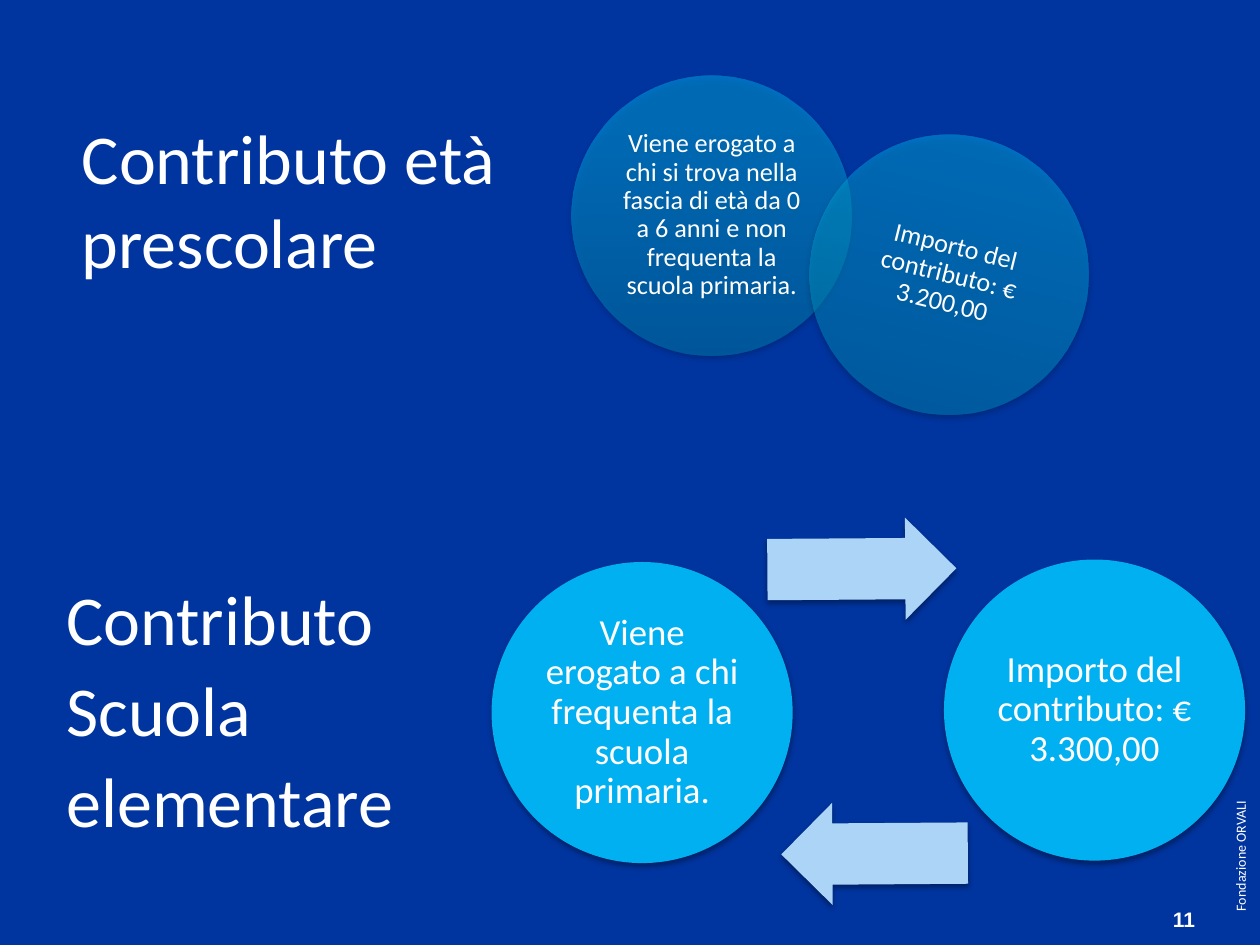
from lxml import etree
from pptx import Presentation
from pptx.dml.color import RGBColor
from pptx.enum.shapes import MSO_SHAPE
from pptx.enum.text import MSO_ANCHOR, PP_ALIGN
from pptx.oxml import parse_xml
from pptx.oxml.ns import nsdecls, qn
from pptx.util import Cm, Pt

COLORS = {
    "background": "00349E",
    "text": "FFFFFF",
    "circle": "00B0F0",
    "arrow": "ABD4F6",
    "shadow": "000000",
}
# Position in percent and colour of each gradient stop
VENN_STOPS = [(0, "0083B3"), (80, "00ABE9"), (100, "00ABEA")]


def rgb(name):
    return RGBColor.from_string(COLORS[name])


def write_text(sp, lines, size, font="Calibri", bold=False, align=PP_ALIGN.LEFT,
               anchor=MSO_ANCHOR.TOP, spacing=None, gap=0, inset=None):
    tf = sp.text_frame
    tf.word_wrap = True
    tf.vertical_anchor = anchor
    if inset is not None:
        tf.margin_left = tf.margin_right = Cm(inset)
        tf.margin_top = tf.margin_bottom = Cm(inset)
    for i, line in enumerate(lines):
        p = tf.paragraphs[0] if i == 0 else tf.add_paragraph()
        p.alignment = align
        if spacing:
            p.line_spacing = spacing
        if i:
            p.space_before = Pt(gap)
        r = p.add_run()
        r.text = line
        r.font.name, r.font.size, r.font.bold = font, Pt(size), bold
        r.font.color.rgb = rgb("text")


def add_label(s, x, y, w, h, lines, size, rotation=0, **fmt):
    sp = s.shapes.add_textbox(Cm(x), Cm(y), Cm(w), Cm(h))
    sp.rotation = rotation
    write_text(sp, lines, size, **fmt)


def add_soft_shadow(sp):
    sp.shadow.inherit = False
    effects = sp._element.spPr.find(qn("a:effectLst"))
    effects.append(parse_xml(
        f'<a:outerShdw {nsdecls("a")} blurRad="{Pt(3.1)}" dist="{Pt(1.8)}" '
        f'dir="5400000" rotWithShape="0"><a:srgbClr val="{COLORS["shadow"]}">'
        '<a:alpha val="35000"/></a:srgbClr></a:outerShdw>'))


def set_glass_fill(sp):
    """Half-transparent gradient that runs from bottom to top."""
    sp.fill.gradient()
    grad = sp._element.spPr.find(qn("a:gradFill"))
    for child in list(grad):
        grad.remove(child)
    stops = etree.SubElement(grad, qn("a:gsLst"))
    for pos, color in VENN_STOPS:
        gs = etree.SubElement(stops, qn("a:gs"), pos=str(pos * 1000))
        clr = etree.SubElement(gs, qn("a:srgbClr"), val=color)
        etree.SubElement(clr, qn("a:alpha"), val="50000")
    etree.SubElement(grad, qn("a:lin"), ang="16200000", scaled="0")


def add_figure(s, kind, x, y, w, h, fill=None, rotation=0):
    sp = s.shapes.add_shape(kind, Cm(x), Cm(y), Cm(w), Cm(h))
    sp.rotation = rotation
    sp.line.fill.background()
    if fill:
        sp.fill.solid()
        sp.fill.fore_color.rgb = rgb(fill)
    else:
        set_glass_fill(sp)
    add_soft_shadow(sp)
    return sp


def add_circle(s, x, y, d, text, size, inset, **look):
    sp = add_figure(s, MSO_SHAPE.OVAL, x, y, d, d, **look)
    write_text(sp, [text], size, align=PP_ALIGN.CENTER,
               anchor=MSO_ANCHOR.MIDDLE, spacing=0.9, inset=inset)


def add_venn(s, x, y, d):
    """Two overlapping glass circles, the second one tilted."""
    circles = [
        (0, 0, 0, "Viene erogato a chi si trova nella fascia di età da 0 a 6 anni "
                  "e non frequenta la scuola primaria."),
        (4.78, 1.2, 13.9, "Importo del contributo: € 3.200,00"),
    ]
    for dx, dy, angle, text in circles:
        add_circle(s, x + dx, y + dy, d, text, 15, 0.15, rotation=angle)


def add_cycle(s, x, y, d):
    """Two solid circles joined by arrows in both directions."""
    circles = [
        (0, 0.89, "Viene erogato a chi frequenta la scuola primaria."),
        (9.12, 0.84, "Importo del contributo: € 3.300,00"),
    ]
    arrows = [(5.56, 0, 3.81, 359.6), (5.84, 5.74, 3.76, 179.6)]
    for (cx, cy, text), (ax, ay, w, angle) in zip(circles, arrows):
        add_circle(s, x + cx, y + cy, d, text, 21, 0.08, fill="circle")
        sp = add_figure(s, MSO_SHAPE.RIGHT_ARROW, x + ax, y + ay, w, 2.06,
                        fill="arrow", rotation=angle)
        sp.adjustments[0], sp.adjustments[1] = 0.6, 0.5


def add_footer(s, right, bottom):
    """Vertical foundation name and page number in the lower right corner."""
    add_label(s, right - 4.78, bottom - 5.13, 8.79, 0.61,
              ["Fondazione ORVALI"], 8, rotation=270)
    add_label(s, right - 3.5, bottom - 0.86, 2.44, 0.69, ["11"], 12, font="Arial",
              bold=True, align=PP_ALIGN.RIGHT, anchor=MSO_ANCHOR.MIDDLE)


def main():
    prs = Presentation()
    prs.slide_width, prs.slide_height = Cm(25.4), Cm(19.05)
    s = prs.slides.add_slide(prs.slide_layouts[6])
    s.background.fill.solid()
    s.background.fill.fore_color.rgb = rgb("background")

    # Preschool contribution
    add_venn(s, 11.53, 1.52, 5.64)
    add_label(s, 1.4, 1.93, 13.41, 3.89, ["Contributo età prescolare"], 40,
              anchor=MSO_ANCHOR.BOTTOM)

    # Primary school contribution
    add_label(s, 1.09, 11.53, 9.6, 5.56, ["Contributo", "Scuola", "elementare"], 40,
              anchor=MSO_ANCHOR.BOTTOM, gap=4)
    add_cycle(s, 9.91, 10.44, 6.07)

    add_footer(s, 25.4, 19.05)
    prs.save("out.pptx")


if __name__ == "__main__":
    main()
